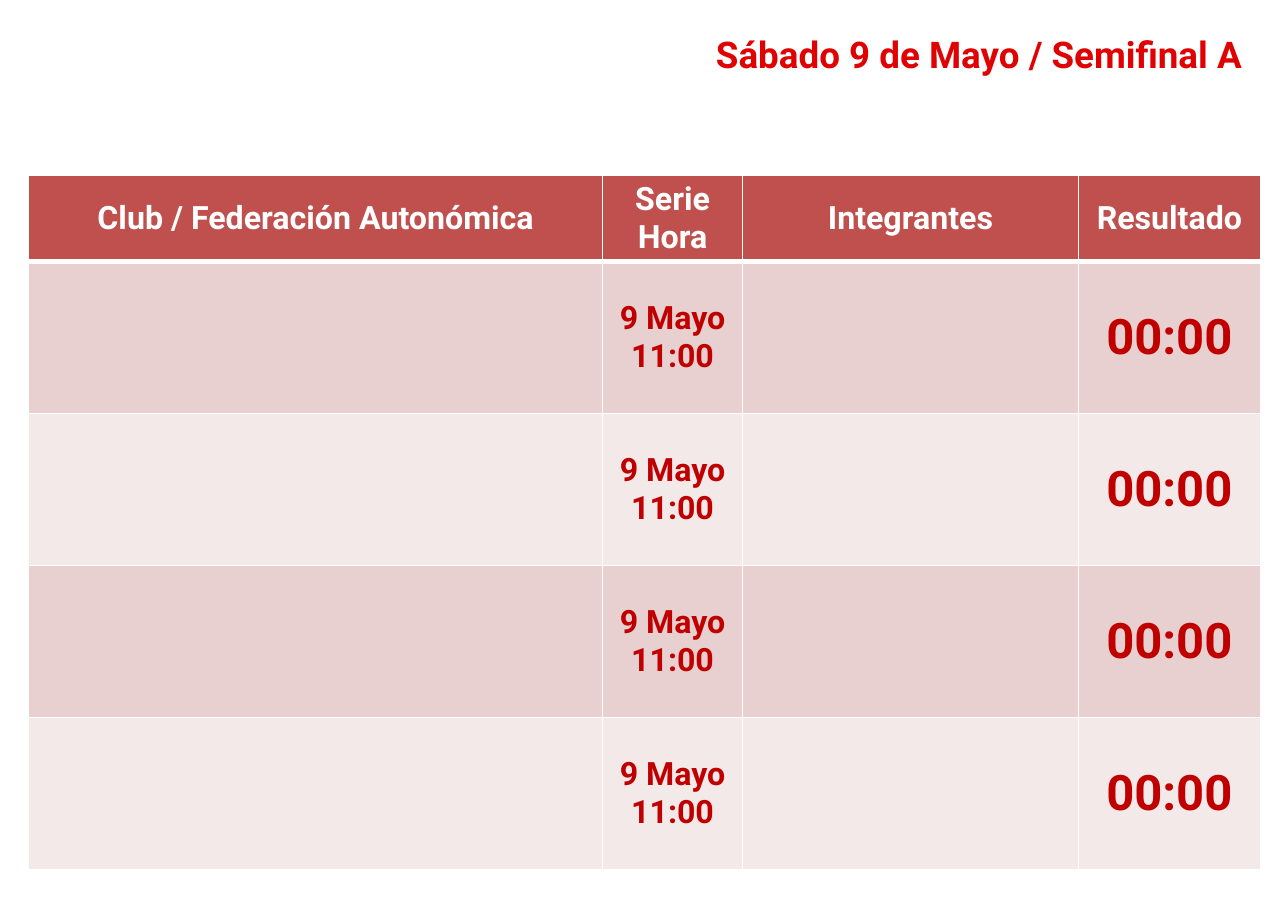
from dataclasses import dataclass

from lxml.etree import SubElement
from pptx import Presentation
from pptx.dml.color import RGBColor
from pptx.enum.text import MSO_ANCHOR, MSO_AUTO_SIZE, PP_ALIGN
from pptx.oxml.ns import qn
from pptx.slide import Slide
from pptx.table import _Cell
from pptx.text.text import TextFrame
from pptx.util import Emu, Pt

EMU_PER_PX = 9144
FONT = "Roboto"
WHITE = RGBColor(0xFF, 0xFF, 0xFF)
TITLE_RED = RGBColor(0xE0, 0x02, 0x02)
HEADER_RED = RGBColor(0xC0, 0x50, 0x4D)
TEXT_RED = RGBColor(0xC0, 0x00, 0x00)
BANDS = (RGBColor(0xE8, 0xD0, 0xD0), RGBColor(0xF4, 0xE9, 0xE9))
HEADER_HEIGHT = 77
SERIES_HEIGHT = 138
SERIES_COUNT = 4


@dataclass(frozen=True)
class Column:
    """A results column with its heading and the entry of each series."""

    heading: str
    width: int
    entry: str = ""
    entry_size: int = 21


COLUMNS = (
    Column("Club / Federación Autonómica", 521),
    Column("Serie\nHora", 127, "9 Mayo\n11:00"),
    Column("Integrantes", 305),
    Column("Resultado", 165, "00:00", 32),
)


def px(length: int) -> Emu:
    """Turn px into EMU."""
    return Emu(length * EMU_PER_PX)


def write_text(frame: TextFrame, text: str, size: int, color: RGBColor, align: PP_ALIGN) -> None:
    """Write bold text, one paragraph per line."""
    frame.text = text
    for paragraph in frame.paragraphs:
        paragraph.alignment = align
        for run in paragraph.runs:
            run.font.name = FONT
            run.font.size = Pt(size)
            run.font.bold = True
            run.font.color.rgb = color


def add_borders(cell: _Cell, top: int, bottom: int) -> None:
    """Give a cell white borders, with widths in points."""
    properties = cell._tc.get_or_add_tcPr()
    for side, width in (("L", 1), ("R", 1), ("T", top), ("B", bottom)):
        line = SubElement(properties, qn(f"a:ln{side}"), w=str(Pt(width)))
        fill = SubElement(line, qn("a:solidFill"))
        SubElement(fill, qn("a:srgbClr"), val=str(WHITE))


def draw_cell(cell: _Cell, column: Column, row: int) -> None:
    """Draw a heading in row 0 and a series entry in the others."""
    is_header = row == 0
    add_borders(cell, top=3 if row == 1 else 1, bottom=3 if is_header else 1)
    cell.fill.solid()
    cell.fill.fore_color.rgb = HEADER_RED if is_header else BANDS[(row - 1) % 2]
    cell.vertical_anchor = MSO_ANCHOR.MIDDLE
    text = column.heading if is_header else column.entry
    size = 21 if is_header else column.entry_size
    if text:
        write_text(cell.text_frame, text, size, WHITE if is_header else TEXT_RED, PP_ALIGN.CENTER)


def add_results_table(slide: Slide) -> None:
    """Add the table of series and results."""
    heights = [HEADER_HEIGHT] + [SERIES_HEIGHT] * SERIES_COUNT
    width = sum(column.width for column in COLUMNS)
    table = slide.shapes.add_table(
        len(heights), len(COLUMNS), px(26), px(159), px(width), px(sum(heights))
    ).table
    for index, column in enumerate(COLUMNS):
        table.columns[index].width = px(column.width)
        for row, height in enumerate(heights):
            table.rows[row].height = px(height)
            draw_cell(table.cell(row, index), column, row)


def add_title(slide: Slide) -> None:
    """Add the title with the day and the round."""
    frame = slide.shapes.add_textbox(px(558), px(24), px(579), px(50)).text_frame
    frame.word_wrap = True
    frame.auto_size = MSO_AUTO_SIZE.SHAPE_TO_FIT_TEXT
    write_text(frame, "Sábado 9 de Mayo / Semifinal A", 24, TITLE_RED, PP_ALIGN.RIGHT)


def main() -> None:
    """Build and save the slide."""
    presentation = Presentation()
    presentation.slide_width = px(1169)
    presentation.slide_height = px(827)
    slide = presentation.slides.add_slide(presentation.slide_layouts[6])
    add_results_table(slide)
    add_title(slide)
    presentation.save("out.pptx")


if __name__ == "__main__":
    main()
